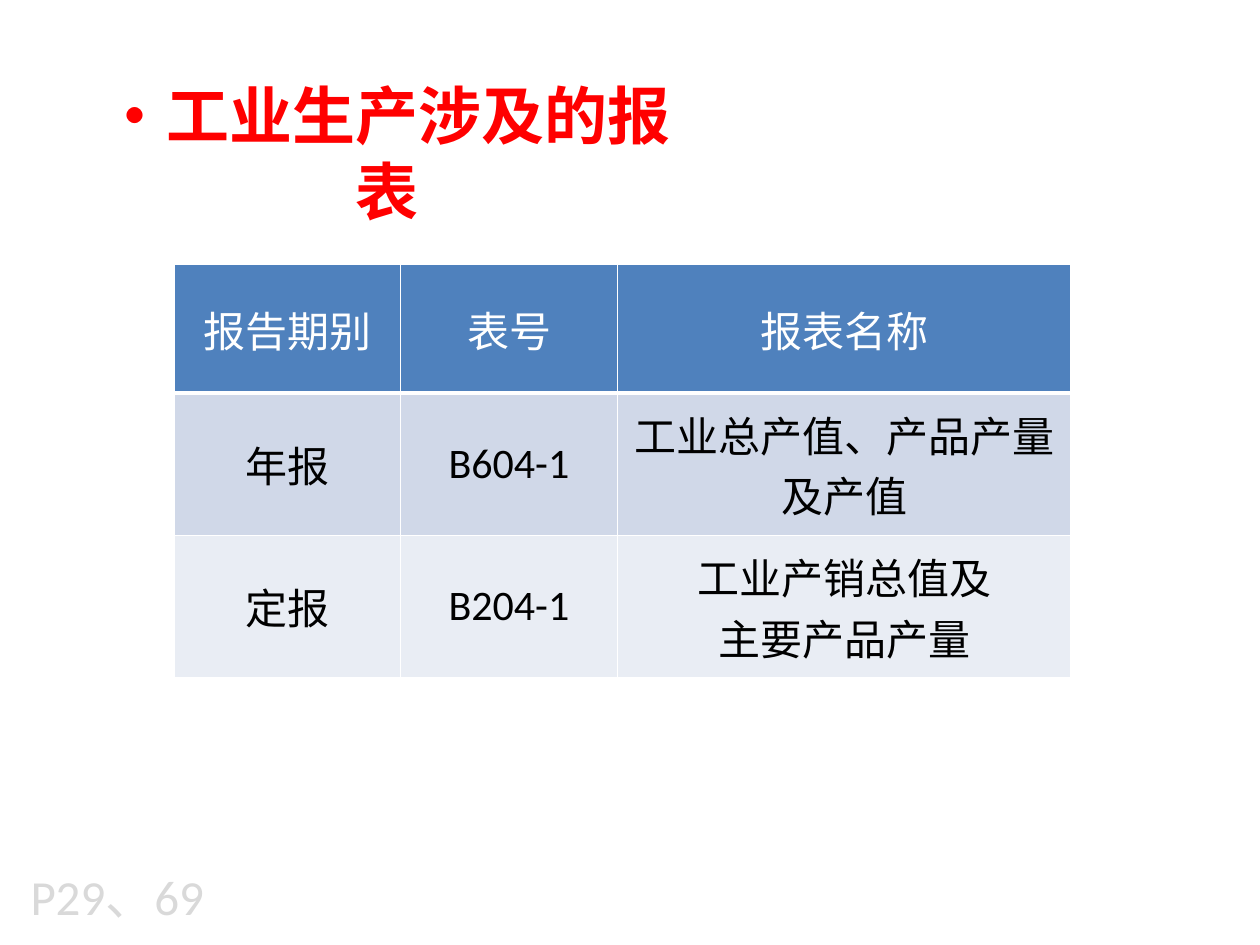
from dataclasses import dataclass

from lxml import etree
from pptx import Presentation
from pptx.dml.color import RGBColor
from pptx.enum.text import MSO_ANCHOR, MSO_AUTO_SIZE, PP_ALIGN
from pptx.oxml.ns import qn
from pptx.util import Pt

CENTER = PP_ALIGN.CENTER
TOP, MIDDLE = MSO_ANCHOR.TOP, MSO_ANCHOR.MIDDLE
GROW = MSO_AUTO_SIZE.SHAPE_TO_FIT_TEXT
NO_FIT = MSO_AUTO_SIZE.NONE
LATIN_FONT, CHINESE_FONT = "Calibri", "Noto Sans CJK SC"
WHITE = "FFFFFF"
COLUMN_WIDTHS = (129.6, 123.84, 259.2)


@dataclass
class Box:
    left: float
    top: float
    width: float
    height: float

    def lengths(self):
        return [Pt(value) for value in (self.left, self.top, self.width, self.height)]


@dataclass
class TextStyle:
    color: str
    size: float
    font: str = LATIN_FONT
    bold: bool = False


@dataclass
class TableRow:
    height: float
    fill: str
    text_color: str
    texts: tuple
    bottom_border: float = 1


ROWS = (
    TableRow(73.44, "4F81BD", WHITE, ("报告期别", "表号", "报表名称"), 3),
    TableRow(81.36, "D0D8E8", "000000", ("年报", "B604-1", "工业总产值、产品产量及产值")),
    TableRow(81.36, "E9EDF4", "000000", ("定报", "B204-1", "工业产销总值及\n主要产品产量")),
)


def rgb(color: str) -> RGBColor:
    return RGBColor.from_string(color)


def set_attributes(target, values: dict) -> None:
    for name, value in values.items():
        setattr(target, name, value)


def write_text(frame, text: str, style: TextStyle) -> None:
    frame.text = text
    for paragraph in frame.paragraphs:
        paragraph.alignment = CENTER
        for run in paragraph.runs:
            set_attributes(run.font, {
                "name": style.font, "size": Pt(style.size), "bold": style.bold})
            run.font.color.rgb = rgb(style.color)
            east_asian = etree.SubElement(run.font._element, qn("a:ea"))
            east_asian.set("typeface", CHINESE_FONT)


def add_borders(cell, bottom_width: float) -> None:
    properties = cell._tc.get_or_add_tcPr()
    widths = {"a:lnL": 1, "a:lnR": 1, "a:lnT": 1, "a:lnB": bottom_width}
    for position, (tag, width) in enumerate(widths.items()):
        line = etree.Element(qn(tag), w=str(Pt(width)))
        fill = etree.SubElement(line, qn("a:solidFill"))
        etree.SubElement(fill, qn("a:srgbClr"), val=WHITE)
        properties.insert(position, line)


def add_report_table(slide, box: Box) -> None:
    table = slide.shapes.add_table(len(ROWS), len(COLUMN_WIDTHS), *box.lengths()).table
    for column, width in zip(table.columns, COLUMN_WIDTHS):
        column.width = Pt(width)
    for table_row, row in zip(table.rows, ROWS):
        table_row.height = Pt(row.height)
        for cell, text in zip(table_row.cells, row.texts):
            cell.vertical_anchor = MIDDLE
            cell.fill.solid()
            cell.fill.fore_color.rgb = rgb(row.fill)
            add_borders(cell, row.bottom_border)
            write_text(cell.text_frame, text, TextStyle(row.text_color, 24))


def place_title(slide, box: Box, text: str) -> None:
    title = slide.shapes.title
    set_attributes(title, dict(zip(("left", "top", "width", "height"), box.lengths())))
    set_attributes(title.text_frame, {
        "word_wrap": True, "auto_size": GROW, "vertical_anchor": TOP,
        "margin_top": Pt(6)})
    write_text(title.text_frame, text, TextStyle("FF0000", 36, CHINESE_FONT, True))
    title.text_frame.paragraphs[0].line_spacing = Pt(43.4)


def add_page_reference(slide, box: Box, text: str) -> None:
    frame = slide.shapes.add_textbox(*box.lengths()).text_frame
    set_attributes(frame, {
        "word_wrap": True, "auto_size": NO_FIT, "vertical_anchor": MIDDLE})
    write_text(frame, text, TextStyle("D9D9D9", 28))


def main() -> None:
    presentation = Presentation()
    presentation.slide_width, presentation.slide_height = Pt(720), Pt(540)
    title_only = presentation.slide_layouts[5]
    slide = presentation.slides.add_slide(title_only)

    # Heading, table of reports, page reference
    place_title(slide, Box(35.28, 37.44, 371.52, 51.12), "·工业生产涉及的报表")
    add_report_table(slide, Box(99.36, 151.2, 512.64, 236.16))
    add_page_reference(slide, Box(-16.56, 481.68, 167.04, 60.48), "P29、69")

    presentation.save("out.pptx")


if __name__ == "__main__":
    main()
